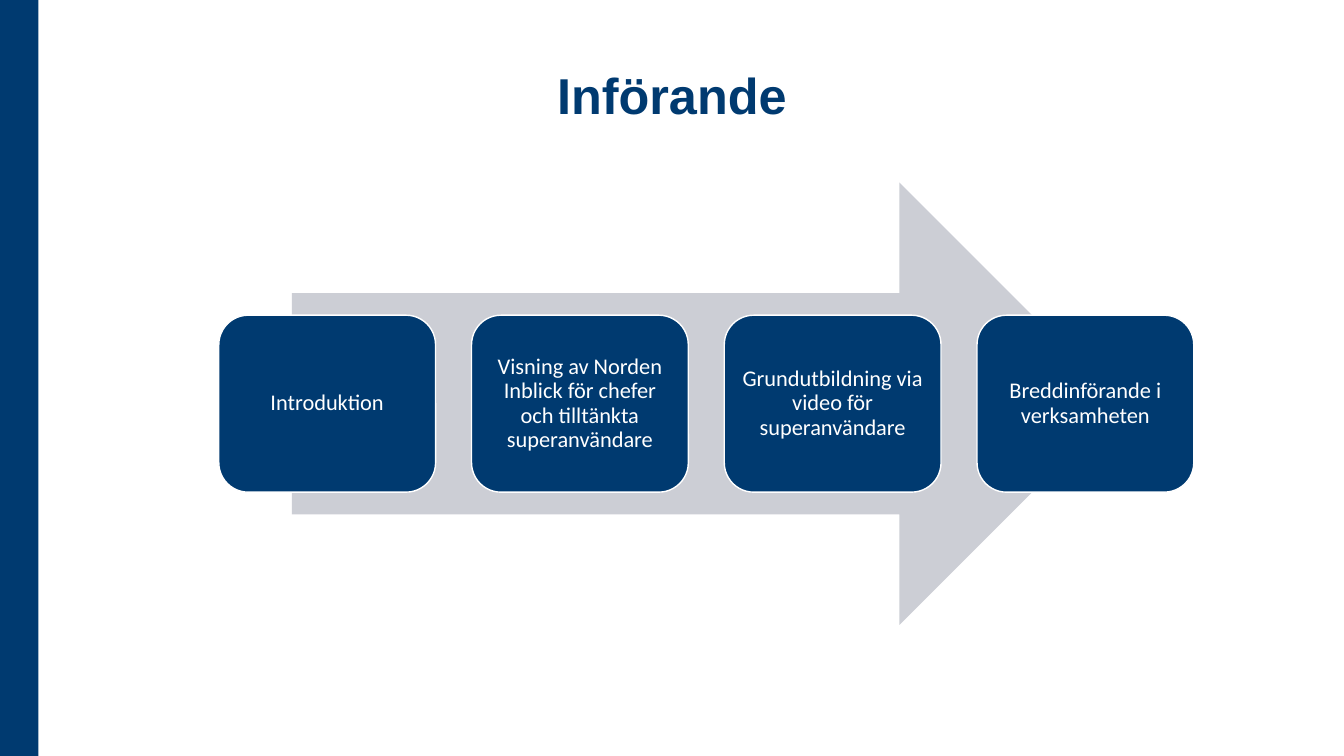
from dataclasses import dataclass

from pptx import Presentation
from pptx.dml.color import RGBColor
from pptx.enum.shapes import MSO_SHAPE
from pptx.enum.text import MSO_ANCHOR, PP_ALIGN
from pptx.util import Inches, Pt

RECTANGLE = MSO_SHAPE.RECTANGLE
ROUNDED = MSO_SHAPE.ROUNDED_RECTANGLE
RIGHT_ARROW = MSO_SHAPE.RIGHT_ARROW
CENTER = PP_ALIGN.CENTER
MIDDLE = MSO_ANCHOR.MIDDLE
BOTTOM = MSO_ANCHOR.BOTTOM


@dataclass(frozen=True)
class Theme:
    navy: RGBColor = RGBColor(0x00, 0x3A, 0x70)
    gray: RGBColor = RGBColor(0xCC, 0xCE, 0xD5)
    white: RGBColor = RGBColor(0xFF, 0xFF, 0xFF)
    title_font: str = "Arial"
    step_font: str = "Calibri"
    title_size: Pt = Pt(36)
    step_size: Pt = Pt(16)
    outline: Pt = Pt(1)


THEME = Theme()
SLIDE_WIDTH, SLIDE_HEIGHT = 13.33, 7.5
STEPS = [
    "Introduktion",
    "Visning av Norden Inblick för chefer och tilltänkta superanvändare",
    "Grundutbildning via video för superanvändare",
    "Breddinförande i verksamheten",
]


def add_filled_shape(slide, kind, box, color):
    shape = slide.shapes.add_shape(kind, *map(Inches, box))
    shape.shadow.inherit = False
    shape.fill.solid()
    shape.fill.fore_color.rgb = color
    shape.line.fill.background()
    return shape


def write_centered(text_frame, text, font_name, size, color):
    text_frame.word_wrap = True
    paragraph = text_frame.paragraphs[0]
    paragraph.text = text
    paragraph.alignment = CENTER
    paragraph.font.name = font_name
    paragraph.font.size = size
    paragraph.font.color.rgb = color
    return paragraph


def add_title(slide, box, text):
    text_frame = slide.shapes.add_textbox(*map(Inches, box)).text_frame
    text_frame.vertical_anchor = BOTTOM
    paragraph = write_centered(
        text_frame, text, THEME.title_font, THEME.title_size, THEME.navy)
    paragraph.font.bold = True


def add_step(slide, box, text):
    card = add_filled_shape(slide, ROUNDED, box, THEME.navy)
    card.line.color.rgb = THEME.white
    card.line.width = THEME.outline
    text_frame = card.text_frame
    text_frame.margin_left = text_frame.margin_right = Inches(0.07)
    text_frame.margin_top = text_frame.margin_bottom = Inches(0.07)
    text_frame.vertical_anchor = MIDDLE
    paragraph = write_centered(
        text_frame, text, THEME.step_font, THEME.step_size, THEME.white)
    paragraph.line_spacing = 0.9


def add_process(slide, box, steps):
    """Place equal step cards across the box, over a centred arrow."""
    left, top, width, height = box
    arrow_width = 0.85 * width
    arrow_left = left + (width - arrow_width) / 2
    add_filled_shape(
        slide, RIGHT_ARROW, (arrow_left, top, arrow_width, height), THEME.gray)

    card_width, card_height = 2.15, 0.4 * height
    card_top = top + (height - card_height) / 2
    pitch = (width - card_width) / (len(steps) - 1)
    for index, text in enumerate(steps):
        card_left = left + index * pitch
        add_step(slide, (card_left, card_top, card_width, card_height), text)


def main():
    presentation = Presentation()
    presentation.slide_width = Inches(SLIDE_WIDTH)
    presentation.slide_height = Inches(SLIDE_HEIGHT)
    slide = presentation.slides.add_slide(presentation.slide_layouts[6])
    add_filled_shape(slide, RECTANGLE, (0, 0, 0.38, SLIDE_HEIGHT), THEME.navy)
    add_title(slide, (2.73, 0.42, 7.87, 0.87), "Införande")
    add_process(slide, (2.17, 1.81, 9.67, 4.39), STEPS)
    presentation.save("out.pptx")


if __name__ == "__main__":
    main()
